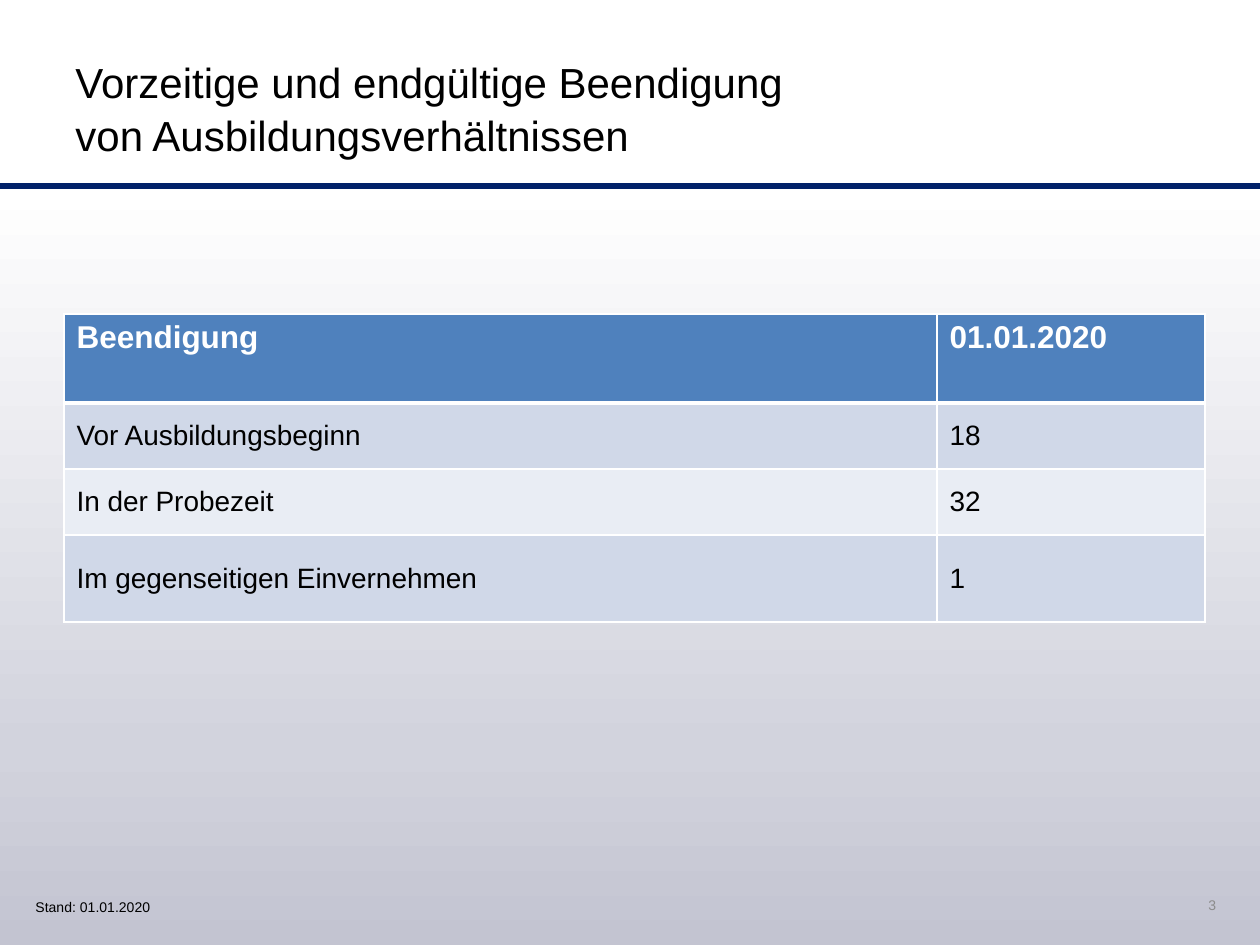
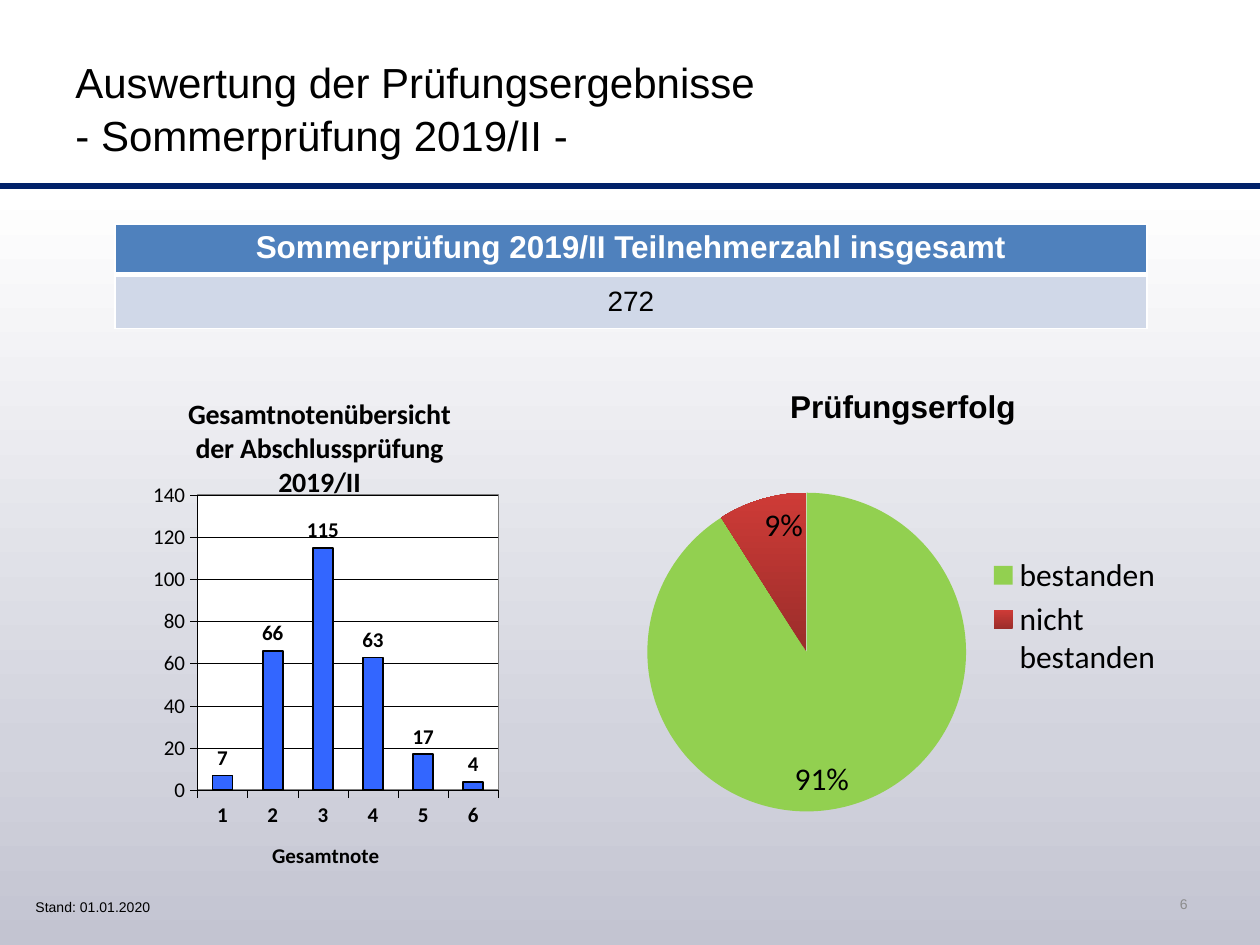
from copy import deepcopy
from dataclasses import dataclass

from lxml import etree
from pptx import Presentation
from pptx import util as u
from pptx.chart import data as chart_data
from pptx.dml import color as dml
from pptx.enum import chart as kinds, shapes, text
from pptx.oxml import ns

PX = 914400 / 126
ALIGN = text.PP_ALIGN
ANCHOR = text.MSO_ANCHOR


@dataclass(frozen=True)
class Theme:
    ink: str = "000000"
    paper: str = "FFFFFF"
    rule: str = "012169"
    muted: str = "8C8C8C"
    header: str = "4F81BD"
    bands: tuple = ("D0D8E8", "E9EDF4")
    backdrop: tuple = ((0, "C3C4D1"), (0.26, "D2D3DD"), (1, "FFFFFF"))
    bar: str = "3366FF"
    passed: str = "92D050"
    failed: tuple = ((0, "9B2D2A"), (1, "CE3B37"))
    font: str = "Arial"
    chart_font: str = "Calibri"
    title_size: int = 24
    header_size: int = 18
    body_size: int = 16
    axis_size: int = 12
    footer_size: int = 8


THEME = Theme()


def px(length):
    return u.Emu(round(length * PX))


def area(*lengths):
    return [px(length) for length in lengths]


def rgb(value):
    return dml.RGBColor.from_string(value)


# Styling helpers
def style_font(font, size, color=THEME.ink, bold=False, name=THEME.chart_font):
    font.name, font.size, font.bold = name, u.Pt(size), bold
    font.color.rgb = rgb(color)


def paint(fill, color):
    fill.solid()
    fill.fore_color.rgb = rgb(color)


def draw_line(line, color, width):
    line.color.rgb = rgb(color)
    line.width = u.Pt(width)


def paint_gradient(fill, root, stops):
    """Blend the stops from the bottom edge to the top edge."""
    fill.gradient()
    fill.gradient_angle = 90
    stop_list = root.find(".//" + ns.qn("a:gsLst"))
    for _ in stops[2:]:
        stop_list.append(deepcopy(stop_list[0]))
    for stop, (position, color) in zip(fill.gradient_stops, stops):
        stop.position = position
        stop.color.rgb = rgb(color)


def write(frame, content, size, color=THEME.ink, bold=False,
          align=ALIGN.LEFT, spacing=None, name=THEME.font):
    para = frame.paragraphs[0]
    para.alignment = align
    if spacing:
        para.line_spacing = spacing
    for index, line in enumerate(content.split("\n")):
        if index:
            para.add_line_break()
        span = para.add_run()
        span.text = line
        style_font(span.font, size, color, bold, name)


def add_text(page, box_area, content, size, anchor=ANCHOR.TOP, **style):
    box = page.shapes.add_textbox(*area(*box_area))
    box.text_frame.word_wrap = True
    box.text_frame.vertical_anchor = anchor
    write(box.text_frame, content, size, **style)


# Shared page frame
def add_page(deck, title, number, number_area):
    page = deck.slides.add_slide(deck.slide_layouts[6])
    backdrop = page.shapes.add_shape(shapes.MSO_SHAPE.RECTANGLE,
                                     *area(0, 186, 1260, 759))
    backdrop.shadow.inherit = False
    backdrop.line.fill.background()
    paint_gradient(backdrop.fill, backdrop._element, THEME.backdrop)

    rule = page.shapes.add_connector(shapes.MSO_CONNECTOR.STRAIGHT,
                                     *area(0, 186, 1260, 186))
    draw_line(rule.line, THEME.rule, 3)
    etree.SubElement(rule._element.spPr, ns.qn("a:effectLst"))

    add_text(page, (63, 39, 765, 135), title, THEME.title_size,
             ANCHOR.MIDDLE, spacing=1.06)
    add_text(page, number_area, number, THEME.footer_size, ANCHOR.MIDDLE,
             color=THEME.muted, align=ALIGN.RIGHT)
    add_text(page, (23, 892, 218, 30), "Stand: 01.01.2020", THEME.footer_size)
    return page


# Tables
def set_borders(cell, **widths):
    properties = cell._tc.get_or_add_tcPr()
    for index, side in enumerate("LRTB"):
        edge = etree.Element(ns.qn(f"a:ln{side}"),
                             w=str(u.Pt(widths.get(side, 1))))
        solid = etree.SubElement(edge, ns.qn("a:solidFill"))
        etree.SubElement(solid, ns.qn("a:srgbClr"), val=THEME.paper)
        properties.insert(index, edge)


def add_table(page, left, top, widths, heights, rows, align=ALIGN.LEFT):
    frame = page.shapes.add_table(
        len(rows), len(widths), *area(left, top, sum(widths), sum(heights)))
    table = frame.table
    table.horz_banding = False
    for column, width in zip(table.columns, widths):
        column.width = px(width)
    for row, height in zip(table.rows, heights):
        row.height = px(height)
    for r, values in enumerate(rows):
        for c, value in enumerate(values):
            cell = table.cell(r, c)
            if r == 0:
                paint(cell.fill, THEME.header)
                set_borders(cell, B=3)
                write(cell.text_frame, value, THEME.header_size, THEME.paper,
                      True, align)
            else:
                paint(cell.fill, THEME.bands[(r - 1) % 2])
                set_borders(cell, T=3 if r == 1 else 1)
                cell.vertical_anchor = ANCHOR.MIDDLE
                write(cell.text_frame, value, THEME.body_size, align=align)


# Charts
def add_chart(page, kind, chart_area, title, categories, values, size,
              title_size, title_font):
    data = chart_data.CategoryChartData()
    data.categories = categories
    data.add_series(title, values)
    chart = page.shapes.add_chart(kind, *area(*chart_area), data).chart
    style_font(chart.font, size)
    chart.has_title = True
    write(chart.chart_title.text_frame, title, title_size, bold=True,
          align=ALIGN.CENTER, name=title_font)
    chart.chart_title.include_in_layout = False
    plot = chart.plots[0]
    plot.has_data_labels = True
    style_font(plot.data_labels.font, size)
    return chart


def place_plot(chart, **fractions):
    """Fix the inner plot area, give it a white ground and a grey edge."""
    plot_area = chart._chartSpace.chart.plotArea
    for old in plot_area.findall(ns.qn("c:layout")):
        plot_area.remove(old)
    layout = etree.Element(ns.qn("c:layout"))
    manual = etree.SubElement(layout, ns.qn("c:manualLayout"))
    settings = dict(layoutTarget="inner", xMode="edge", yMode="edge",
                    **fractions)
    for tag, value in settings.items():
        etree.SubElement(manual, ns.qn(f"c:{tag}"), val=str(value))
    plot_area.insert(0, layout)

    properties = etree.SubElement(plot_area, ns.qn("c:spPr"))
    edge = etree.Element(ns.qn("a:ln"), w=str(u.Pt(1)))
    for parent, color in ((properties, THEME.paper), (edge, "808080")):
        solid = etree.SubElement(parent, ns.qn("a:solidFill"))
        etree.SubElement(solid, ns.qn("a:srgbClr"), val=color)
    properties.append(edge)


def style_axis(axis, bold):
    axis.major_tick_mark = kinds.XL_TICK_MARK.OUTSIDE
    axis.minor_tick_mark = kinds.XL_TICK_MARK.NONE
    style_font(axis.tick_labels.font, THEME.axis_size, bold=bold)
    draw_line(axis.format.line, THEME.ink, 0.25)


def add_success_pie(page):
    chart = add_chart(page, kinds.XL_CHART_TYPE.PIE, (630, 363, 546, 507),
                      "Prüfungserfolg", ["bestanden", "nicht bestanden"],
                      [91, 9], 18, 18, THEME.font)
    chart.has_legend = True
    chart.legend.position = kinds.XL_LEGEND_POSITION.RIGHT
    chart.legend.include_in_layout = False
    style_font(chart.legend.font, 18)
    plot = chart.plots[0]
    labels = plot.data_labels
    labels.show_value, labels.show_percentage = False, True
    labels.number_format, labels.number_format_is_linked = "0%", False
    labels.position = kinds.XL_LABEL_POSITION.INSIDE_END
    points = plot.series[0].points
    paint(points[0].format.fill, THEME.passed)
    paint_gradient(points[1].format.fill, chart._chartSpace, THEME.failed)


def add_grade_columns(page):
    chart = add_chart(page, kinds.XL_CHART_TYPE.COLUMN_CLUSTERED,
                      (129, 373, 381, 509),
                      "Gesamtnotenübersicht der Abschlussprüfung 2019/II",
                      list("123456"), [7, 66, 115, 63, 17, 4],
                      THEME.axis_size, 16, THEME.chart_font)
    chart.has_legend = False
    plot = chart.plots[0]
    plot.gap_width = 150
    plot.vary_by_categories = False
    labels = plot.data_labels
    labels.show_value = True
    labels.position = kinds.XL_LABEL_POSITION.OUTSIDE_END
    labels.font.bold = True
    bars = plot.series[0]
    paint(bars.format.fill, THEME.bar)
    draw_line(bars.format.line, THEME.ink, 1)

    grades, counts = chart.category_axis, chart.value_axis
    style_axis(grades, True)
    style_axis(counts, False)
    grades.has_title = True
    write(grades.axis_title.text_frame, "Gesamtnote", THEME.axis_size,
          bold=True, align=ALIGN.CENTER, name=THEME.chart_font)
    counts.minimum_scale, counts.maximum_scale = 0, 140
    counts.major_unit = 20
    draw_line(counts.major_gridlines.format.line, THEME.ink, 0.25)
    place_plot(chart, x=0.18, y=0.24, w=0.79, h=0.58)


def main():
    deck = Presentation()
    deck.slide_width, deck.slide_height = area(1260, 945)

    # Early terminations
    page = add_page(deck, "Vorzeitige und endgültige Beendigung\n"
                    "von Ausbildungsverhältnissen", "3", (1196, 881, 32, 47))
    add_table(page, 64, 314, [873, 268], [89, 66, 66, 87], [
        ("Beendigung", "01.01.2020"),
        ("Vor Ausbildungsbeginn", "18"),
        ("In der Probezeit", "32"),
        ("Im gegenseitigen Einvernehmen", "1"),
    ])

    # Exam results
    page = add_page(deck, "Auswertung der Prüfungsergebnisse\n"
                    "- Sommerprüfung 2019/II -", "6", (1145, 879, 55, 50))
    add_success_pie(page)
    add_grade_columns(page)
    add_table(page, 115, 224, [1032], [50, 54], [
        ("Sommerprüfung 2019/II Teilnehmerzahl insgesamt",),
        ("272",),
    ], ALIGN.CENTER)

    deck.save("out.pptx")


if __name__ == "__main__":
    main()
